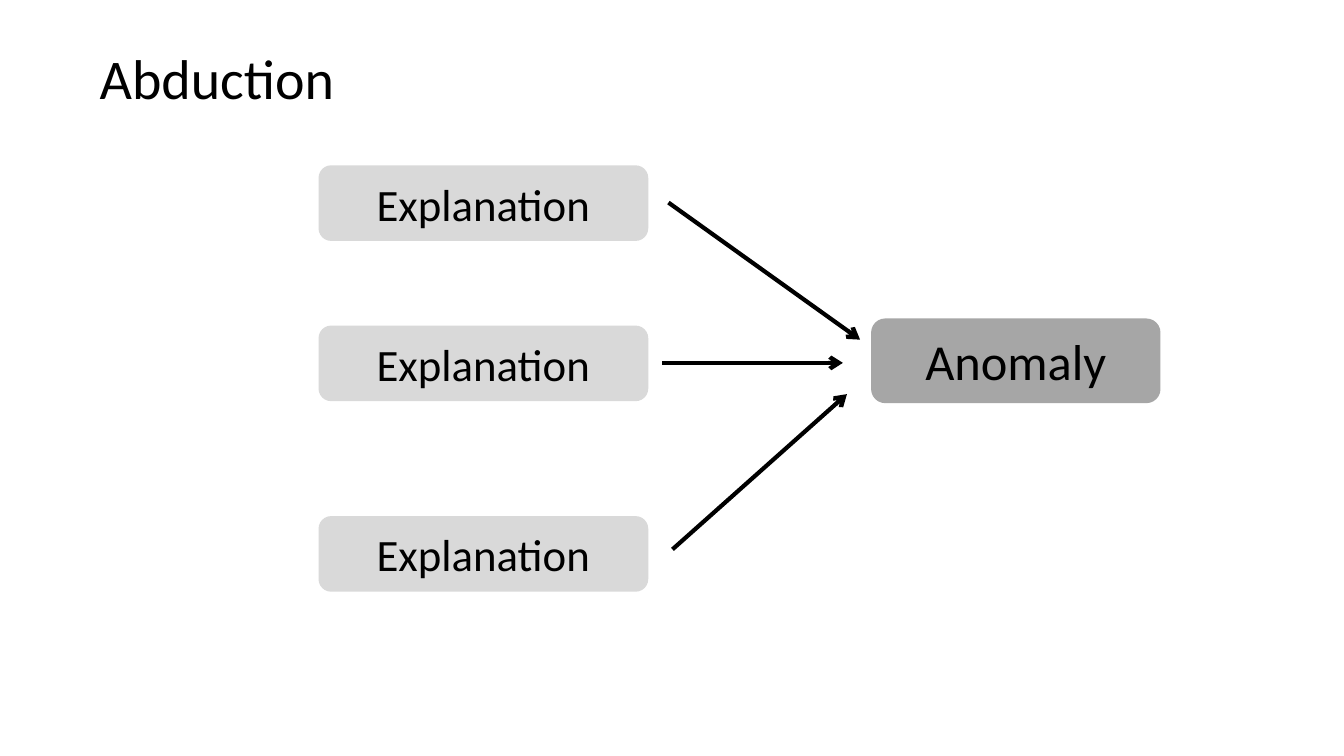
from lxml import etree
from pptx import Presentation
from pptx.dml.color import RGBColor
from pptx.enum.shapes import MSO_CONNECTOR, MSO_SHAPE
from pptx.enum.text import MSO_ANCHOR, PP_ALIGN
from pptx.oxml.ns import qn
from pptx.util import Inches, Pt

ROUNDED = MSO_SHAPE.ROUNDED_RECTANGLE
STRAIGHT = MSO_CONNECTOR.STRAIGHT
MIDDLE = MSO_ANCHOR.MIDDLE
LEFT, CENTER = PP_ALIGN.LEFT, PP_ALIGN.CENTER

# Content: lengths in inches, text sizes in points
COLORS = {"text": "000000", "arrow": "000000",
          "explanation": "D9D9D9", "anomaly": "A6A6A6"}
FONT = "Calibri"
TITLE = ("Abduction", (0.89, 0.38, 7.31, 0.77), 40)
EXPLANATION_TOPS = [1.64, 3.23, 5.12]
BOXES = [("Explanation", (3.16, top, 3.27, 0.75), 32, "explanation")
         for top in EXPLANATION_TOPS]
BOXES.append(("Anomaly", (8.64, 3.16, 2.87, 0.84), 36, "anomaly"))
ARROWS = [((6.63, 2.01), (8.53, 3.37)),
          ((6.57, 3.6), (8.36, 3.6)),
          ((6.67, 5.45), (8.4, 3.91))]


def color(name):
    return RGBColor.from_string(COLORS[name])


def write(shape, text, size, alignment):
    shape.text_frame.word_wrap = True
    paragraph = shape.text_frame.paragraphs[0]
    paragraph.alignment = alignment
    run = paragraph.add_run()
    run.text = text
    for attribute, value in {"name": FONT, "size": Pt(size)}.items():
        setattr(run.font, attribute, value)
    run.font.color.rgb = color("text")


def add_arrow(slide, start, end):
    connector = slide.shapes.add_connector(
        STRAIGHT, *map(Inches, start + end))
    connector.line.color.rgb = color("arrow")
    connector.line.width = Pt(3)
    line = connector.line._get_or_add_ln()
    etree.SubElement(line, qn("a:tailEnd"), type="arrow")
    etree.SubElement(connector._element.spPr, qn("a:effectLst"))


def add_box(slide, text, bounds, size, fill):
    shape = slide.shapes.add_shape(ROUNDED, *map(Inches, bounds))
    shape.shadow.inherit = False
    shape.fill.solid()
    shape.fill.fore_color.rgb = color(fill)
    shape.line.fill.background()
    shape.text_frame.vertical_anchor = MIDDLE
    write(shape, text, size, CENTER)


def main():
    presentation = Presentation()
    presentation.slide_width = Inches(13.33)
    presentation.slide_height = Inches(7.5)
    slide = presentation.slides.add_slide(presentation.slide_layouts[6])

    # Arrows from the explanations towards the anomaly
    for start, end in ARROWS:
        add_arrow(slide, start, end)

    # Title
    text, bounds, size = TITLE
    title = slide.shapes.add_textbox(*map(Inches, bounds))
    write(title, text, size, LEFT)

    # Explanations and anomaly
    for box in BOXES:
        add_box(slide, *box)

    presentation.save("out.pptx")


if __name__ == "__main__":
    main()
